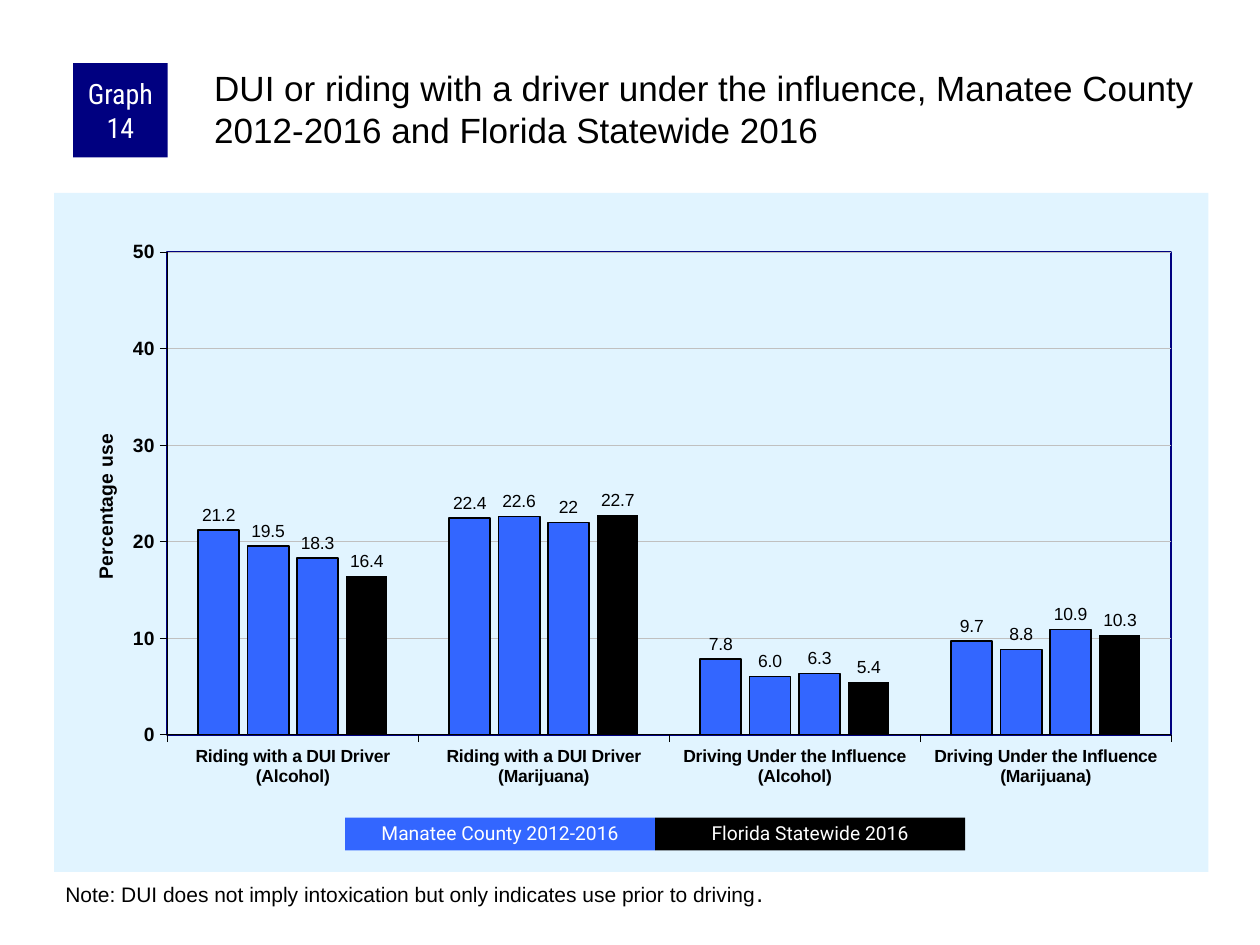
from lxml.etree import SubElement
from pptx import Presentation
from pptx.chart.data import CategoryChartData
from pptx.dml.color import RGBColor
from pptx.enum.chart import XL_CHART_TYPE, XL_LABEL_POSITION, XL_TICK_MARK
from pptx.enum.shapes import MSO_SHAPE
from pptx.enum.text import MSO_ANCHOR, MSO_AUTO_SIZE, PP_ALIGN
from pptx.oxml import parse_xml
from pptx.oxml.ns import nsdecls, qn
from pptx.util import Pt

PX = 9144  # 100 px to the inch
BLACK, WHITE, NAVY, BLUE = "000000", "FFFFFF", "000080", "3366FF"
PALE_BLUE, GREY = "E1F4FF", "C0C0C0"

TITLE = ("DUI or riding with a driver under the influence, Manatee County "
         "2012-2016 and Florida Statewide 2016")
NOTE = "Note: DUI does not imply intoxication but only indicates use prior to driving"
CATEGORIES = [
    "Riding with a DUI Driver (Alcohol)",
    "Riding with a DUI Driver (Marijuana)",
    "Driving Under the Influence (Alcohol)",
    "Driving Under the Influence (Marijuana)",
]
# name, values, fill, outline in points, label format
SERIES = [
    ("Series 1", (21.2, 22.4, 7.8, 9.7), BLUE, 1, "0.0"),
    ("Series 2", (19.5, 22.6, 6, 8.8), BLUE, 1, "0.0"),
    ("Series 3", (18.3, 22, 6.3, 10.9), BLUE, 0.75, "General"),
    ("Series 4", (16.4, 22.7, 5.4, 10.3), BLACK, None, "General"),
]
LEGEND = [("Manatee County 2012-2016", BLUE), ("Florida Statewide 2016", BLACK)]
LEGEND_LEFT, LEGEND_TOP, LEGEND_WIDTH, LEGEND_HEIGHT = 274, 649, 246, 26


def color(value):
    return RGBColor.from_string(value)


def box(*lengths):
    return [length * PX for length in lengths]


def style_font(font, size, name="Arial", fill=BLACK, bold=False):
    font.size, font.name, font.bold = Pt(size), name, bold
    font.color.rgb = color(fill)


def style_line(line, fill, width):
    line.color.rgb = color(fill)
    line.width = Pt(width)


def set_margins(frame, left, top, right, bottom):
    frame.margin_left, frame.margin_top, frame.margin_right, frame.margin_bottom = box(
        left, top, right, bottom)


def add_label(slide, bounds, text, fill, font_name, size):
    """Add a filled rectangle with centred white text."""
    shape = slide.shapes.add_shape(MSO_SHAPE.RECTANGLE, *box(*bounds))
    shape.shadow.inherit = False
    shape.fill.solid()
    shape.fill.fore_color.rgb = color(fill)
    shape.line.fill.background()
    frame = shape.text_frame
    frame.word_wrap = True
    frame.vertical_anchor = MSO_ANCHOR.MIDDLE
    frame.text = text
    paragraph = frame.paragraphs[0]
    paragraph.alignment = PP_ALIGN.CENTER
    style_font(paragraph.runs[0].font, size, font_name, WHITE)
    return shape


def add_text(slide, bounds, text, size):
    frame = slide.shapes.add_textbox(*box(*bounds)).text_frame
    frame.word_wrap = True
    frame.text = text
    style_font(frame.paragraphs[0].runs[0].font, size)
    return frame


def set_layout(parent, position, **values):
    """Place a chart part by fractions of the chart's size."""
    layout = parent.find(qn("c:layout"))
    if layout is None:
        layout = parse_xml(f"<c:layout {nsdecls('c')}/>")
        if parent.tag == qn("c:title"):
            parent.find(qn("c:tx")).addnext(layout)
        else:
            parent.insert(position, layout)
    for child in list(layout):
        layout.remove(child)
    manual = SubElement(layout, qn("c:manualLayout"))
    for name, value in values.items():
        SubElement(manual, qn(f"c:{name}")).set("val", str(value))


def area_format(fill, line):
    outline = (f'<a:ln w="12700"><a:solidFill><a:srgbClr val="{line}"/></a:solidFill></a:ln>'
               if line else "<a:ln><a:noFill/></a:ln>")
    return parse_xml(f'<c:spPr {nsdecls("c", "a")}><a:solidFill><a:srgbClr val="{fill}"/>'
                     f"</a:solidFill>{outline}</c:spPr>")


def style_axis(axis, size):
    axis.major_tick_mark = XL_TICK_MARK.OUTSIDE
    axis.minor_tick_mark = XL_TICK_MARK.NONE
    style_font(axis.tick_labels.font, size, bold=True)
    style_line(axis.format.line, BLACK, 0.25)


def add_bar_chart(slide):
    data = CategoryChartData()
    data.categories = CATEGORIES
    for name, values, *_ in SERIES:
        data.add_series(name, values)
    chart = slide.shapes.add_chart(
        XL_CHART_TYPE.COLUMN_CLUSTERED, *box(43, 153, 916, 539), data).chart
    chart.has_legend = chart.has_title = False
    style_font(chart.font, 11.5)

    plot = chart.plots[0]
    plot.gap_width, plot.overlap, plot.vary_by_categories = 150, -20, False
    for series, (_, _, fill, width, number_format) in zip(plot.series, SERIES):
        series.format.fill.solid()
        series.format.fill.fore_color.rgb = color(fill)
        if width:
            style_line(series.format.line, BLACK, width)
        labels = series.data_labels
        labels.show_value = True
        labels.position = XL_LABEL_POSITION.OUTSIDE_END
        labels.number_format, labels.number_format_is_linked = number_format, False
        style_font(labels.font, 10)

    style_axis(chart.category_axis, 10)
    value_axis = chart.value_axis
    style_axis(value_axis, 11)
    value_axis.minimum_scale, value_axis.maximum_scale, value_axis.major_unit = 0, 50, 10
    style_line(value_axis.major_gridlines.format.line, GREY, 0.25)
    title = value_axis.axis_title
    title.text_frame.text = "Percentage use"
    style_font(title.text_frame.paragraphs[0].runs[0].font, 11, bold=True)
    body = title.text_frame._txBody.find(qn("a:bodyPr"))
    body.set("rot", "-5400000")
    body.set("vert", "horz")
    set_layout(title._element, 1, xMode="edge", yMode="edge", x=0.03, y=0.35)

    chart_space = chart._chartSpace
    plot_area = chart_space.chart.plotArea
    set_layout(plot_area, 0, layoutTarget="inner", xMode="edge", yMode="edge",
               x=0.098, y=0.087, w=0.87, h=0.711)
    plot_area.append(area_format(PALE_BLUE, NAVY))
    chart_space.chart.addnext(area_format(PALE_BLUE, None))


def main():
    presentation = Presentation()
    presentation.slide_width, presentation.slide_height = box(1000, 750)
    slide = presentation.slides.add_slide(presentation.slide_layouts[6])

    add_bar_chart(slide)
    badge = add_label(slide, (58, 50, 75, 75), "Graph 14", NAVY, "Roboto Condensed", 16)
    set_margins(badge.text_frame, 5, 0, 5, 0)
    set_margins(add_text(slide, (167, 50, 792, 83), TITLE, 20), 3, 3, 0, 0)

    note = add_text(slide, (42, 692, 917, 34), NOTE, 12)
    note.auto_size = MSO_AUTO_SIZE.SHAPE_TO_FIT_TEXT
    full_stop = note.paragraphs[0].add_run()
    full_stop.text = "."
    style_font(full_stop.font, 14)

    for index, (text, fill) in enumerate(LEGEND):
        left = LEGEND_LEFT + index * LEGEND_WIDTH
        key = add_label(slide, (left, LEGEND_TOP, LEGEND_WIDTH, LEGEND_HEIGHT),
                        text, fill, "Roboto", 11)
        key.text_frame.paragraphs[0].line_spacing = 0.9

    presentation.save("out.pptx")


if __name__ == "__main__":
    main()
